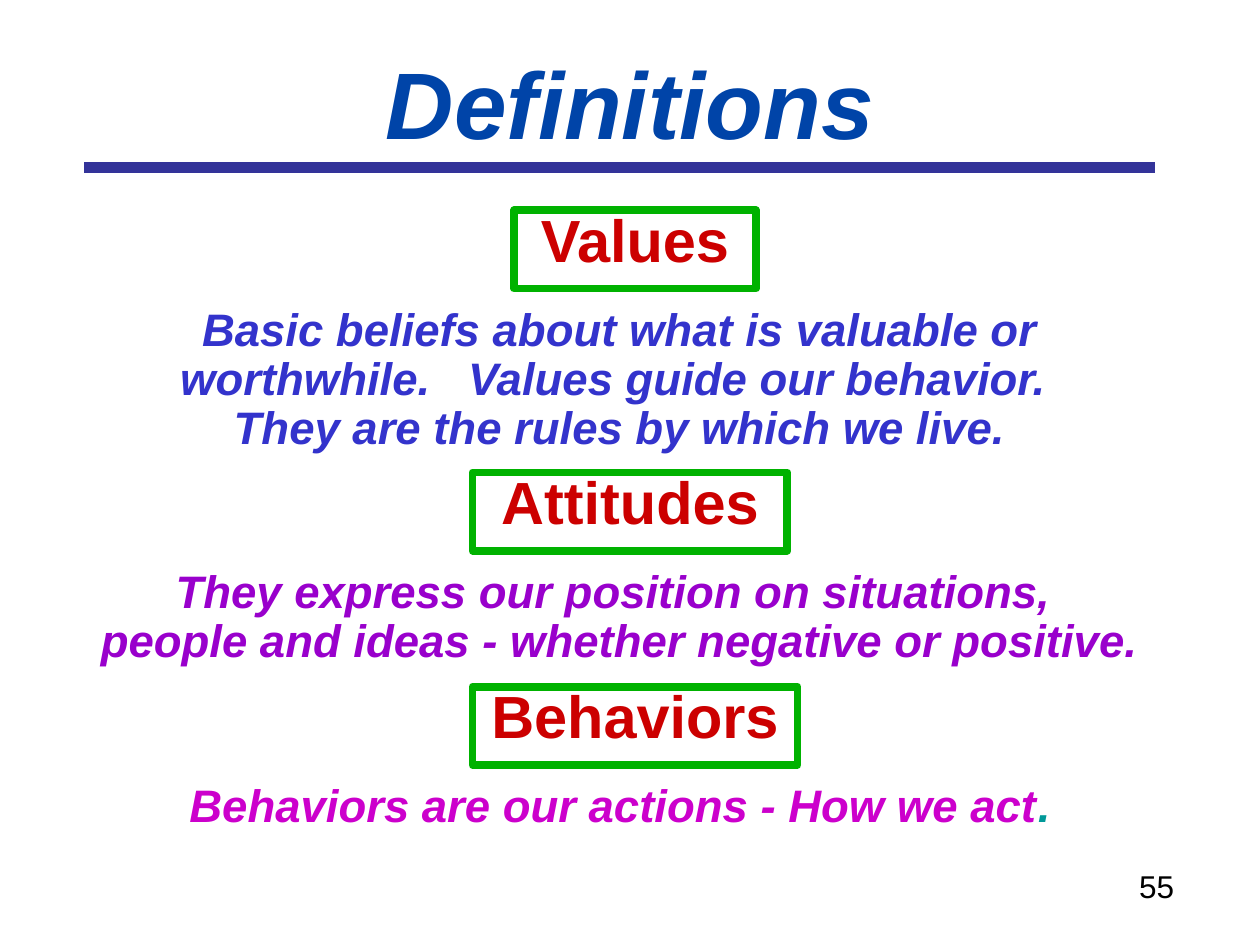
"""Build the Definitions slide: three boxed terms, each with its meaning."""
from dataclasses import dataclass

from pptx import Presentation
from pptx.dml.color import RGBColor
from pptx.enum.shapes import MSO_CONNECTOR, MSO_SHAPE
from pptx.enum.text import MSO_ANCHOR, MSO_AUTO_SIZE, PP_ALIGN
from pptx.oxml.ns import qn
from pptx.slide import Slide
from pptx.text.text import TextFrame
from pptx.util import Inches, Pt

LEFT, WIDTH = 0.67, 8.5
BOX_HEIGHT, MEANING_OFFSET = 0.62, 0.72


@dataclass(frozen=True)
class Definition:
    term: str
    meaning: str
    color: str
    top: float
    box_left: float
    box_width: float
    meaning_height: float
    ending: str = ""


DEFINITIONS = [
    Definition(
        "Values",
        "Basic beliefs about what is valuable or worthwhile.   "
        "Values guide our behavior. \vThey are the rules by which we live.",
        "3333CC", 1.67, 4.08, 1.92, 1.27,
    ),
    Definition(
        "Attitudes",
        "They express our position on situations,  "
        "people and ideas - whether negative or positive.",
        "9900CC", 3.75, 3.75, 2.5, 0.88,
    ),
    Definition(
        "Behaviors", "Behaviors are our actions - How we act",
        "CC00CC", 5.45, 3.75, 2.58, 0.49, ending=".",
    ),
]


def rgb(value: str) -> RGBColor:
    return RGBColor.from_string(value)


def write(frame: TextFrame, text: str, *, size: float, color: str,
          bold: bool = False, italic: bool = False, spacing: float = 1.0,
          anchor: MSO_ANCHOR = MSO_ANCHOR.TOP, wrap: bool = True,
          ending: str = "", ending_color: str = "009999") -> None:
    frame.word_wrap = wrap
    frame.auto_size = MSO_AUTO_SIZE.NONE
    frame.vertical_anchor = anchor
    paragraph = frame.paragraphs[0]
    paragraph.text = text
    paragraph.alignment = PP_ALIGN.CENTER
    paragraph.line_spacing = spacing
    if ending:
        paragraph.add_run().text = ending
    for run in paragraph.runs:
        font = run.font
        font.name, font.size = "Arial", Pt(size)
        font.bold, font.italic = bold, italic
        font.color.rgb = rgb(color)
    if ending:
        paragraph.runs[-1].font.color.rgb = rgb(ending_color)


def add_text_frame(slide: Slide, left: float, top: float,
                   width: float, height: float) -> TextFrame:
    return slide.shapes.add_textbox(
        Inches(left), Inches(top), Inches(width), Inches(height)).text_frame


def add_title(slide: Slide, text: str) -> None:
    title = slide.shapes.title
    title.left, title.top = Inches(0.5), Inches(0.32)
    title.width, title.height = Inches(9), Inches(0.97)
    write(title.text_frame, text, size=54, color="0044A8", bold=True,
          italic=True, anchor=MSO_ANCHOR.MIDDLE)


def add_rule(slide: Slide, top: float) -> None:
    rule = slide.shapes.add_connector(
        MSO_CONNECTOR.STRAIGHT, Inches(LEFT), Inches(top),
        Inches(LEFT + WIDTH), Inches(top))
    rule.line.color.rgb = rgb("333399")
    rule.line.width = Pt(6)
    properties = rule._element.spPr
    properties.append(properties.makeelement(qn("a:effectLst"), {}))


def add_definition(slide: Slide, definition: Definition) -> None:
    box = slide.shapes.add_shape(
        MSO_SHAPE.RECTANGLE, Inches(definition.box_left),
        Inches(definition.top), Inches(definition.box_width),
        Inches(BOX_HEIGHT))
    box.shadow.inherit = False
    box.fill.background()
    box.line.color.rgb = rgb("00B200")
    box.line.width = Pt(4.5)
    write(box.text_frame, definition.term, size=34, color="CC0000",
          bold=True, spacing=0.8)
    meaning = add_text_frame(slide, LEFT, definition.top + MEANING_OFFSET,
                             WIDTH, definition.meaning_height)
    write(meaning, definition.meaning, size=26, color=definition.color,
          bold=True, italic=True, spacing=0.9, ending=definition.ending)


def main() -> None:
    deck = Presentation()
    deck.slide_width, deck.slide_height = Inches(10), Inches(7.5)
    slide = deck.slides.add_slide(deck.slide_layouts.get_by_name("Title Only"))
    add_title(slide, "Definitions")
    add_rule(slide, 1.33)
    for definition in DEFINITIONS:
        add_definition(slide, definition)
    page_number = add_text_frame(slide, 8.94, 6.83, 0.48, 0.4)
    write(page_number, "55", size=18, color="000000", wrap=False)
    deck.save("out.pptx")


if __name__ == "__main__":
    main()
